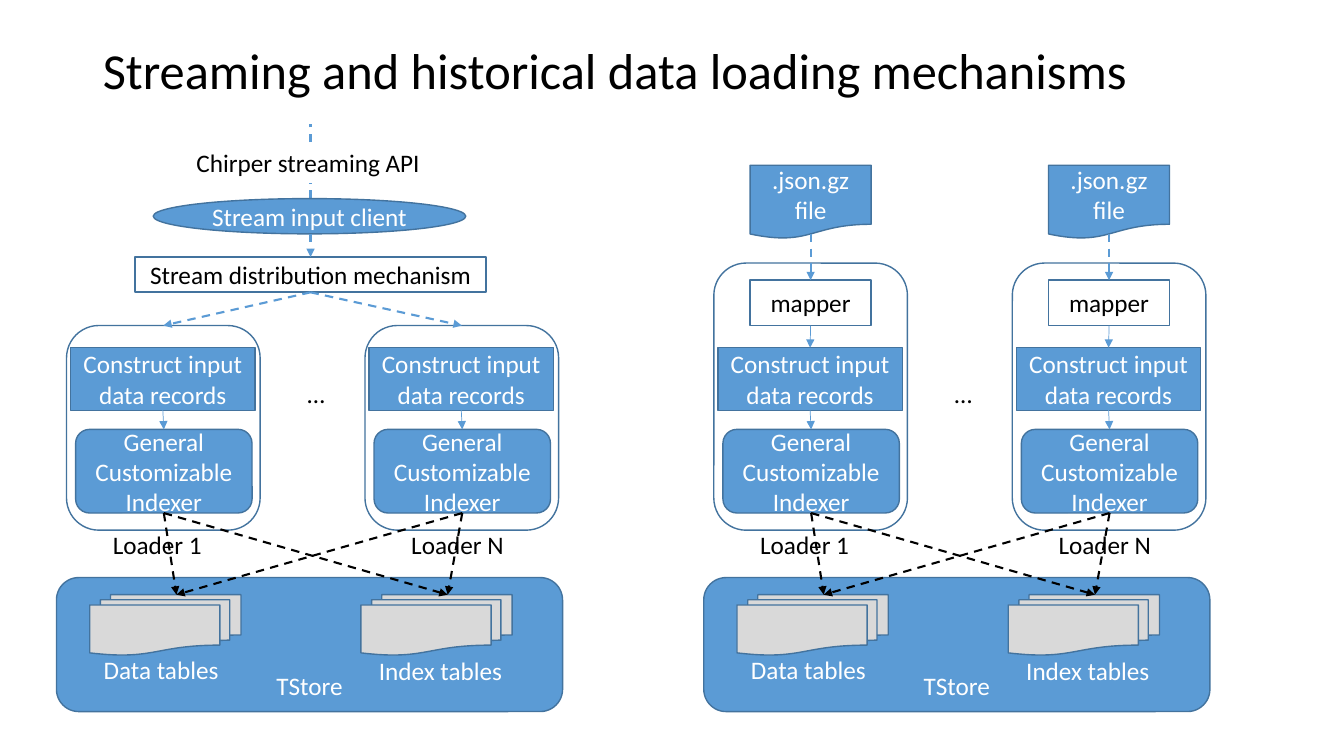
from pptx import Presentation
from pptx.dml.color import RGBColor
from pptx.enum.dml import MSO_LINE
from pptx.enum.shapes import MSO_CONNECTOR, MSO_SHAPE
from pptx.enum.text import MSO_ANCHOR, MSO_AUTO_SIZE, PP_ALIGN
from pptx.oxml.ns import qn
from pptx.util import Inches, Pt
from lxml import etree

RECTANGLE = MSO_SHAPE.RECTANGLE
ROUNDED = MSO_SHAPE.ROUNDED_RECTANGLE
OVAL = MSO_SHAPE.OVAL
DOCUMENT = MSO_SHAPE.FLOWCHART_DOCUMENT
MULTIDOCUMENT = MSO_SHAPE.FLOWCHART_MULTIDOCUMENT
STRAIGHT = MSO_CONNECTOR.STRAIGHT
DASH = MSO_LINE.DASH
MIDDLE = MSO_ANCHOR.MIDDLE
BOTTOM = MSO_ANCHOR.BOTTOM
CENTER = PP_ALIGN.CENTER
LEFT = PP_ALIGN.LEFT
NO_FIT = MSO_AUTO_SIZE.NONE
GROW = MSO_AUTO_SIZE.SHAPE_TO_FIT_TEXT
TOP_SITE, BOTTOM_SITE = 0, 2

FONT = "Calibri"
COLORS = {
    "blue": "5B9BD5",
    "outline": "43739E",
    "gray": "D9D9D9",
    "black": "000000",
    "white": "FFFFFF",
}

PANEL_WIDTH = 5.02
LANE_OFFSETS = (1.06, 4.02)
LOADER_NAMES = ("Loader 1", "Loader N")
LOADER_BOTTOM = 5.26
STORAGE_TOP = 5.73


def color(name):
    return RGBColor.from_string(COLORS[name])


def write(shape, text, text_color, align, size=18):
    shape.text_frame.text = text
    paragraph = shape.text_frame.paragraphs[0]
    paragraph.alignment = align
    font = paragraph.runs[0].font
    font.name, font.size = FONT, Pt(size)
    font.color.rgb = color(text_color)


def add_box(slide, kind, left, top, width, height, text="", fill=None,
            text_color="white", line_width=1, anchor=MIDDLE):
    shape = slide.shapes.add_shape(
        kind, Inches(left), Inches(top), Inches(width), Inches(height))
    shape.shadow.inherit = False
    if fill:
        shape.fill.solid()
        shape.fill.fore_color.rgb = color(fill)
    else:
        shape.fill.background()
    shape.line.color.rgb = color("outline")
    shape.line.width = Pt(line_width)
    shape.text_frame.vertical_anchor = anchor
    if text:
        write(shape, text, text_color, CENTER)
    return shape


def add_label(slide, left, top, width, text, text_color="black"):
    label = slide.shapes.add_textbox(
        Inches(left), Inches(top), Inches(width), Inches(0.4))
    label.text_frame.word_wrap = True
    label.text_frame.auto_size = GROW
    write(label, text, text_color, LEFT)


def add_line(slide, start=(0, 0), end=(0, 0), start_shape=None, end_shape=None,
             line_color="blue", width=1.5, dashed=True, arrow=True):
    connector = slide.shapes.add_connector(
        STRAIGHT, *(Inches(value) for value in (*start, *end)))
    if start_shape is not None:
        connector.begin_connect(start_shape, BOTTOM_SITE)
    if end_shape is not None:
        connector.end_connect(end_shape, TOP_SITE)
    connector.line.color.rgb = color(line_color)
    connector.line.width = Pt(width)
    if dashed:
        connector.line.dash_style = DASH
    properties = connector._element.spPr
    if arrow:
        tail = etree.SubElement(properties.find(qn("a:ln")), qn("a:tailEnd"))
        tail.set("type", "triangle")
    etree.SubElement(properties, qn("a:effectLst"))


def add_title(slide, left, top, width, height):
    title = slide.shapes.title
    title.left, title.top = Inches(left), Inches(top)
    title.width, title.height = Inches(width), Inches(height)
    title.text_frame.vertical_anchor = MIDDLE
    title.text_frame.auto_size = NO_FIT
    write(title, "Streaming and historical data loading mechanisms",
          "black", LEFT, 36)
    title.text_frame.paragraphs[0].line_spacing = 0.9


def add_loader(slide, center, top):
    loader = add_box(slide, ROUNDED, center - 0.96, top, 1.92,
                     LOADER_BOTTOM - top)
    records = add_box(slide, RECTANGLE, center - 0.92, LOADER_BOTTOM - 1.81,
                      1.83, 0.62, "Construct input data records", "blue")
    indexer = add_box(slide, ROUNDED, center - 0.87, LOADER_BOTTOM - 1, 1.75,
                      0.83, "General Customizable Indexer", "blue")
    add_line(slide, start_shape=records, end_shape=indexer,
             width=0.5, dashed=False)
    return loader, records, indexer


def add_storage(slide, left, top):
    add_box(slide, ROUNDED, left, top, PANEL_WIDTH, 1.33, "TStore", "blue",
            anchor=BOTTOM)
    tables = (("Data tables", 0.33, 0.37, 0.71),
              ("Index tables", 3.02, 3.1, 0.72))
    targets = []
    for name, offset, label_offset, label_drop in tables:
        add_box(slide, MULTIDOCUMENT, left + offset, top + 0.17, 1.5, 0.6,
                fill="gray")
        add_label(slide, left + label_offset, top + label_drop, 1.5, name,
                  "white")
        targets.append((left + offset + 0.86, top + 0.17))
    return targets


def add_panel(slide, left, loader_top):
    lanes = [add_loader(slide, left + offset, loader_top)
             for offset in LANE_OFFSETS]
    add_label(slide, left + 2.39, 3.7, 0.5, "…")
    targets = add_storage(slide, left, STORAGE_TOP)
    for offset, name in zip(LANE_OFFSETS, LOADER_NAMES):
        add_label(slide, left + offset - 0.6, LOADER_BOTTOM - 0.06, 1.19, name)
    for _, _, indexer in lanes:
        for target in targets:
            add_line(slide, end=target, start_shape=indexer,
                     line_color="black")
    return lanes


def add_streaming_panel(slide, left):
    lanes = add_panel(slide, left, 3.23)
    center = left + PANEL_WIDTH / 2 + 0.01
    add_line(slide, (center, 1.41), (center, 1.23), arrow=False)
    add_label(slide, center - 1.23, 1.41, 2.45, "Chirper streaming API")
    add_line(slide, (center, 1.97), (center, 1.82), arrow=False)
    distribution = add_box(slide, RECTANGLE, center - 1.74, 2.55, 3.48, 0.35,
                           "Stream distribution mechanism",
                           text_color="black", line_width=1.25)
    for loader, _, _ in lanes:
        add_line(slide, start_shape=distribution, end_shape=loader)
    add_box(slide, OVAL, center - 1.56, 1.97, 3.1, 0.35,
            "Stream input client", "blue")
    add_line(slide, (center, 2.32), end_shape=distribution)


def add_historical_panel(slide, left):
    lanes = add_panel(slide, left, 2.61)
    for offset, (_, records, _) in zip(LANE_OFFSETS, lanes):
        center = left + offset
        mapper = add_box(slide, RECTANGLE, center - 0.6, 2.78, 1.2, 0.45,
                         "mapper", text_color="black", line_width=1.25)
        add_line(slide, start_shape=mapper, end_shape=records,
                 width=0.5, dashed=False)
        add_box(slide, DOCUMENT, center - 0.6, 1.64, 1.2, 0.73,
                ".json.gz file", "blue")
        add_line(slide, (center, 2.32), end_shape=mapper)


def main():
    presentation = Presentation()
    presentation.slide_width = Inches(13.33)
    presentation.slide_height = Inches(7.5)
    slide = presentation.slides.add_slide(presentation.slide_layouts[5])
    add_title(slide, 0.92, 0, 12.19, 1.45)
    add_streaming_panel(slide, 0.56)
    add_historical_panel(slide, 6.98)
    presentation.save("out.pptx")


if __name__ == "__main__":
    main()
